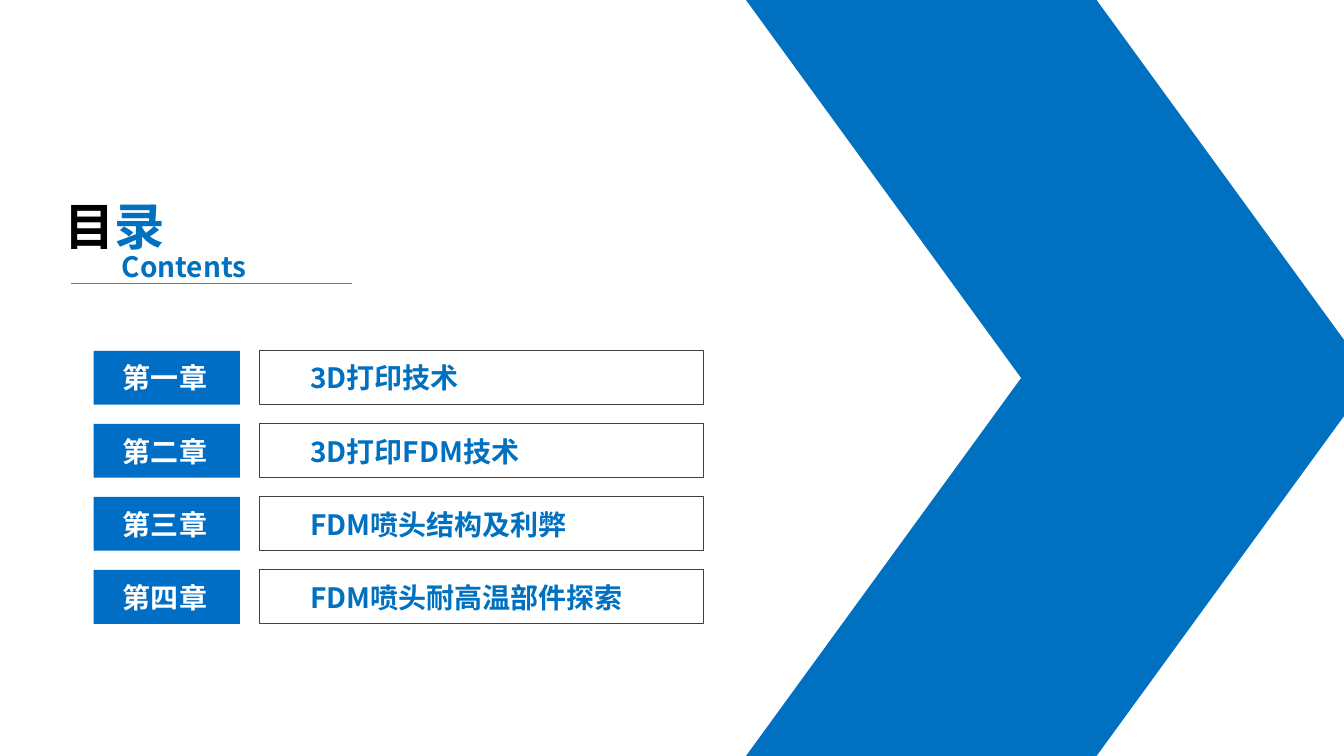
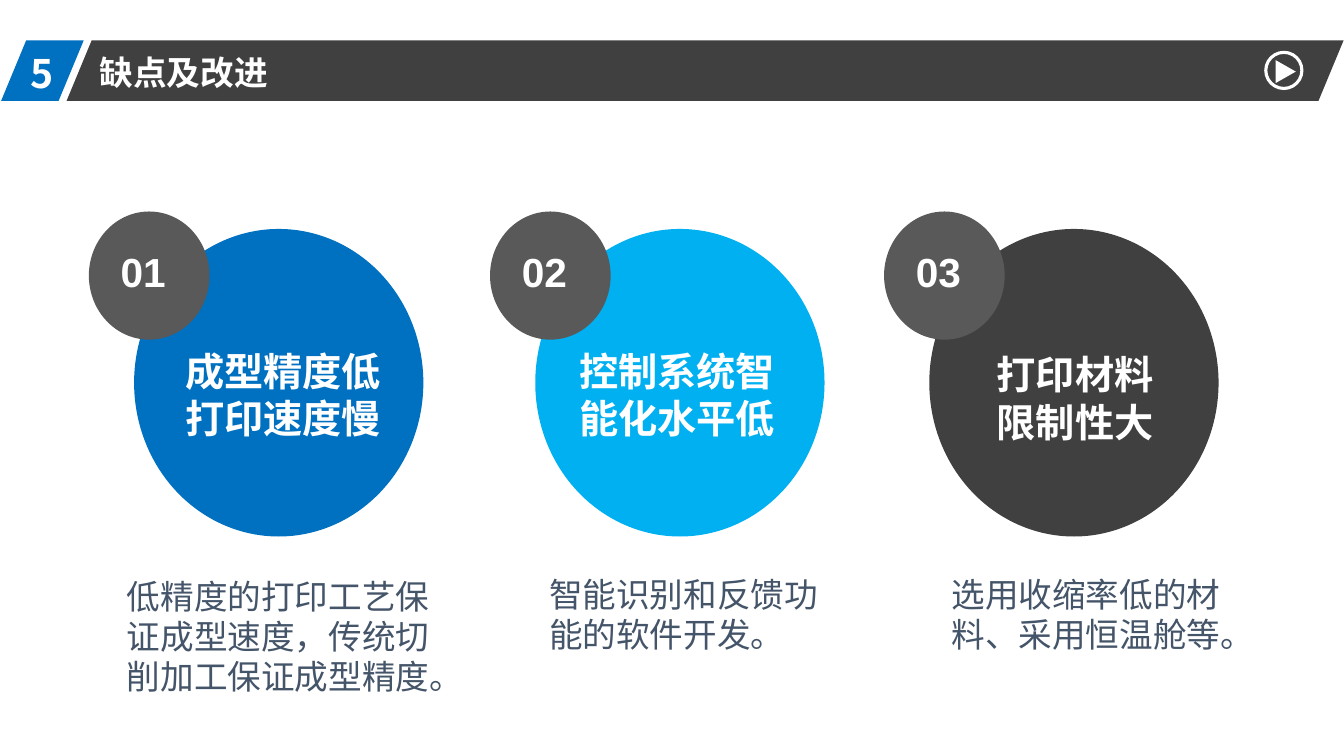
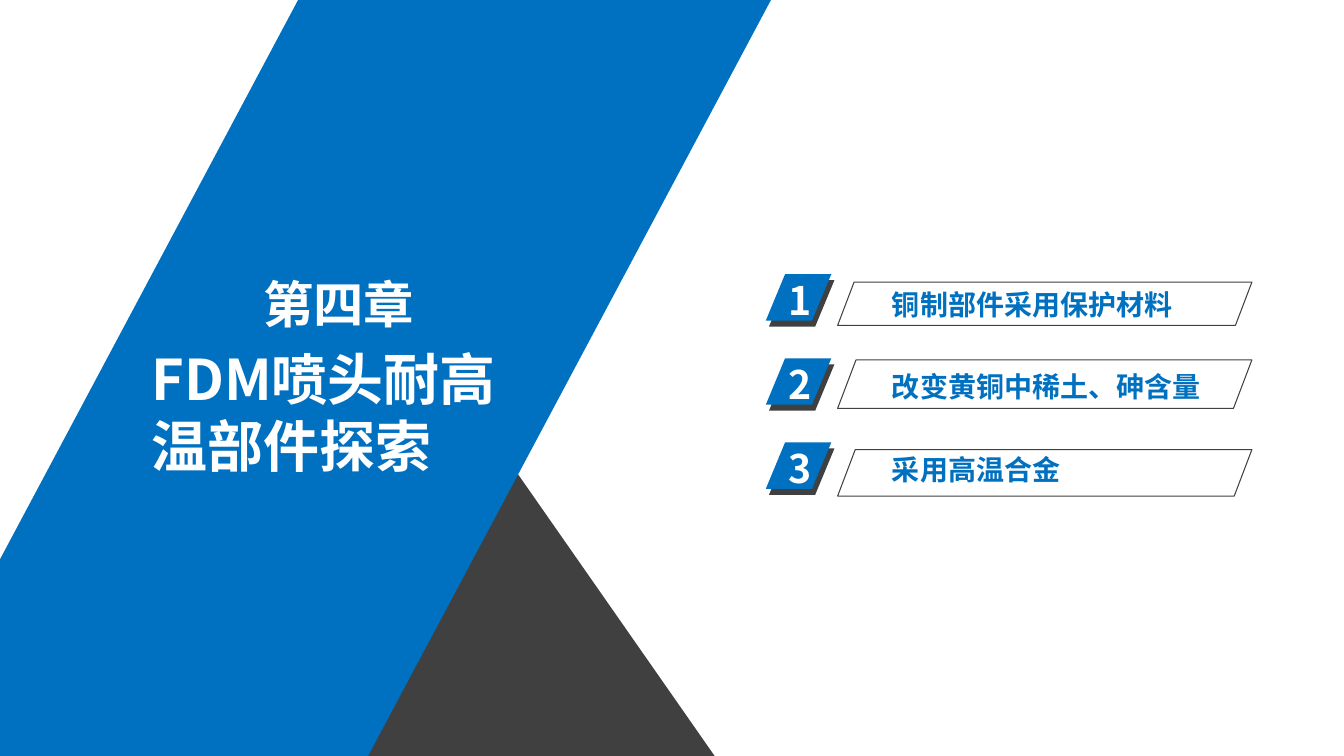
from lxml import etree
from pptx import Presentation
from pptx.dml.color import RGBColor
from pptx.enum.shapes import MSO_CONNECTOR, MSO_SHAPE as SHAPE
from pptx.enum.text import MSO_ANCHOR as ANCHOR, MSO_AUTO_SIZE as AUTO, PP_ALIGN as ALIGN
from pptx.oxml.ns import qn
from pptx.util import Cm, Pt

BLUE = RGBColor(0x00, 0x70, 0xC0)
LABEL_BLUE = RGBColor(0x00, 0x6E, 0xC5)
SKY = RGBColor(0x00, 0xB0, 0xF0)
DARK = RGBColor(0x40, 0x40, 0x40)
GREY = RGBColor(0x59, 0x59, 0x59)
RULE = RGBColor(0x7F, 0x7F, 0x7F)
SLATE = RGBColor(0x44, 0x54, 0x69)
BLACK = RGBColor(0x00, 0x00, 0x00)
WHITE = RGBColor(0xFF, 0xFF, 0xFF)
CJK = "Noto Sans CJK SC"
LATIN = "Arial"
SLANT = 0.415
WIDTH, HEIGHT = 33.87, 19.05


class Deck:
    """Holds the shared style and the slide being built."""

    def __init__(self):
        self.prs = Presentation()
        self.prs.slide_width, self.prs.slide_height = Cm(WIDTH), Cm(HEIGHT)
        self.s = None

    def new_slide(self):
        """Start a slide on the title-only layout."""
        self.s = self.prs.slides.add_slide(self.prs.slide_layouts[5])

    def set_text(self, tf, texts, size, color, bold=True, font=CJK, align=ALIGN.LEFT):
        """Fill one paragraph with runs in one style."""
        tf.word_wrap = True
        p = tf.paragraphs[0]
        for text in texts:
            p.add_run().text = text
        p.alignment = align
        p.font.size, p.font.bold, p.font.name = Pt(size), bold, font
        p.font.color.rgb = color
        props = p._p.get_or_add_pPr().find(qn("a:defRPr"))
        etree.SubElement(props, qn("a:ea"), typeface=CJK)
        return p

    def title(self, box, texts, size, color=WHITE):
        """Place the title in front of the shapes drawn so far."""
        sp = self.s.shapes.title
        sp.left, sp.top, sp.width, sp.height = map(Cm, box)
        self.s.shapes._spTree.append(sp._element)
        tf = sp.text_frame
        tf.auto_size, tf.vertical_anchor = AUTO.NONE, ANCHOR.TOP
        return self.set_text(tf, texts, size, color)

    def text(self, box, text, size, color=WHITE, inset=None, anchor=ANCHOR.TOP, **style):
        """Add a text box."""
        tf = self.s.shapes.add_textbox(*map(Cm, box)).text_frame
        tf.auto_size, tf.vertical_anchor = AUTO.SHAPE_TO_FIT_TEXT, anchor
        if inset is not None:
            tf.margin_left = tf.margin_right = tf.margin_top = tf.margin_bottom = Cm(inset)
        self.set_text(tf, [text], size, color, **style)

    def paint(self, sp, fill=None, line=None, weight=0.75):
        """Set fill and outline and drop the shadow."""
        sp.shadow.inherit = False
        if fill is None:
            sp.fill.background()
        else:
            sp.fill.solid()
            sp.fill.fore_color.rgb = fill
        if line is None:
            sp.line.fill.background()
        else:
            sp.line.color.rgb = line
            sp.line.width = Pt(weight)
        return sp

    def shape(self, kind, box, adj=None, **look):
        """Add a preset shape."""
        sp = self.s.shapes.add_shape(kind, *map(Cm, box))
        if adj is not None:
            sp.adjustments[0] = adj
        return self.paint(sp, **look)

    def labelled_box(self, box, text, color, inset, **look):
        """Add a rectangle with indented text."""
        tf = self.shape(SHAPE.RECTANGLE, box, **look).text_frame
        tf.vertical_anchor, tf.margin_left = ANCHOR.MIDDLE, Cm(inset)
        self.set_text(tf, [text], 20, color)

    def polygon(self, points, **look):
        """Add a closed outline through the points."""
        start, *rest = [(Cm(x), Cm(y)) for x, y in points]
        builder = self.s.shapes.build_freeform(*start)
        builder.add_line_segments(rest, close=True)
        self.paint(builder.convert_to_shape(), **look)

    def rule(self, x1, x2, y):
        """Add a thin horizontal line."""
        cn = self.s.shapes.add_connector(MSO_CONNECTOR.STRAIGHT, Cm(x1), Cm(y), Cm(x2), Cm(y))
        cn.line.color.rgb, cn.line.width = RULE, Pt(0.5)
        etree.SubElement(cn._element.spPr, qn("a:effectLst"))

    def header(self, number, text):
        """Add the slanted title band with its number and play sign."""
        self.shape(SHAPE.PARALLELOGRAM, (1.68, 1.02, 32.18, 1.52), SLANT, fill=DARK)
        self.shape(SHAPE.PARALLELOGRAM, (0.03, 1.02, 2.08, 1.52), SLANT, fill=BLUE)
        self.text((0.51, 1.12, 1.75, 1.45), number, 28)
        self.title((2.26, 1.17, 5, 1.27), [text], 24)
        self.shape(SHAPE.OVAL, (31.9, 1.32, 0.91, 0.91), line=WHITE, weight=2.25)
        sign = self.shape(SHAPE.ISOSCELES_TRIANGLE, (32.11, 1.55, 0.58, 0.51), fill=WHITE)
        sign.rotation = 90


def contents(deck):
    """Build the table of contents."""
    deck.new_slide()
    half = HEIGHT / 2
    for top in (half, 0):
        sp = deck.shape(SHAPE.PARALLELOGRAM, (18.8, top, 15.77, half), 0.728, fill=BLUE)
        if top == 0:
            sp._element.spPr.find(qn("a:xfrm")).set("flipV", "1")
    chapters = [("第一章", "3D打印技术"), ("第二章", "3D打印FDM技术"),
                ("第三章", "FDM喷头结构及利弊"), ("第四章", "FDM喷头耐高温部件探索")]
    for i, (chapter, topic) in enumerate(chapters):
        top = 8.84 + 1.84 * i
        deck.labelled_box((6.55, top, 11.18, 1.36), topic, BLUE, 1.27, line=DARK)
        deck.labelled_box((2.36, top, 3.69, 1.36), chapter, WHITE, 0.74, fill=LABEL_BLUE)
    p = deck.title((1.37, 4.78, 3.99, 1.8), ["目", "录"], 36, BLACK)
    p.runs[1].font.color.rgb = BLUE
    deck.rule(1.78, 8.86, 7.14)
    deck.text((2.82, 6.15, 3.99, 1.12), "Contents", 20, BLUE)


def drawbacks(deck):
    """Build the three drawbacks with their remedies."""
    deck.new_slide()
    deck.header("5", "缺点及改进")
    items = [
        (3.38, BLUE, "成型精度低打印速度慢", (4.67, 8.76, 5.11, 2.39),
         "低精度的打印工艺保证成型速度，传统切削加工保证成型精度。", (3.2, 14.5, 7.7, 3.07)),
        (13.49, SKY, "控制系统智能化水平低", (14.6, 8.76, 5.49, 2.39),
         "智能识别和反馈功能的软件开发。", (13.84, 14.45, 6.8, 2.06)),
        (23.42, DARK, "打印材料限制性大", (25.12, 8.84, 4.67, 2.39),
         "选用收缩率低的材料、采用恒温舱等。", (23.98, 14.45, 6.8, 2.06)),
    ]
    for i, (left, color, problem, problem_box, remedy, remedy_box) in enumerate(items, 1):
        deck.shape(SHAPE.OVAL, (left, 5.77, 7.29, 7.75), fill=color)
        deck.shape(SHAPE.OVAL, (left - 1.14, 5.33, 3.04, 3.23), fill=GREY)
        deck.text((left - 1.22, 6.15, 2.9, 1.37), f"{i:02}", 29, inset=0.1,
                  anchor=ANCHOR.MIDDLE, font=LATIN, align=ALIGN.CENTER)
        deck.text(problem_box, problem, 28, inset=0, font=LATIN)
        deck.text(remedy_box, remedy, 24, SLATE, inset=0, bold=False, font=LATIN)


def chapter_four(deck):
    """Build the opening of chapter four."""
    deck.new_slide()
    deck.polygon([(9.07, HEIGHT), (12.9, 11.73), (18.01, HEIGHT)], fill=DARK)
    deck.shape(SHAPE.PARALLELOGRAM, (-2.64, 0, 22.07, HEIGHT), 0.533, fill=BLUE)
    deck.text((6.38, 6.76, 4.6, 1.8), "第四章", 36)
    deck.title((3.56, 8.56, 9.58, 3.68), ["FDM喷头耐高温部件探索"], 40)
    sections = [("铜制部件采用保护材料", 7.11, 1.09), ("改变黄铜中稀土、砷含量", 9.07, 1.22),
                ("采用高温合金", 11.33, 1.17)]
    for i, (section, frame_top, frame_height) in enumerate(sections):
        drop = 2.12 * i
        deck.shape(SHAPE.PARALLELOGRAM, (19.38, 7.06 + drop, 1.65, 1.17), SLANT, fill=DARK)
        deck.shape(SHAPE.PARALLELOGRAM, (19.3, 6.91 + drop, 1.65, 1.17), SLANT, fill=BLUE)
        deck.text((19.61, 6.83 + drop, 1.75, 1.45), str(i + 1), 28)
        deck.shape(SHAPE.PARALLELOGRAM, (21.11, frame_top, 10.44, frame_height), 0.38, line=DARK)
        deck.text((22.23, 7.11 + 2.08 * i, 8.46, 1.12), section, 20, BLUE)


def main():
    """Build and save the slides."""
    deck = Deck()
    for build in (contents, drawbacks, chapter_four):
        build(deck)
    deck.prs.save("out.pptx")


if __name__ == "__main__":
    main()
